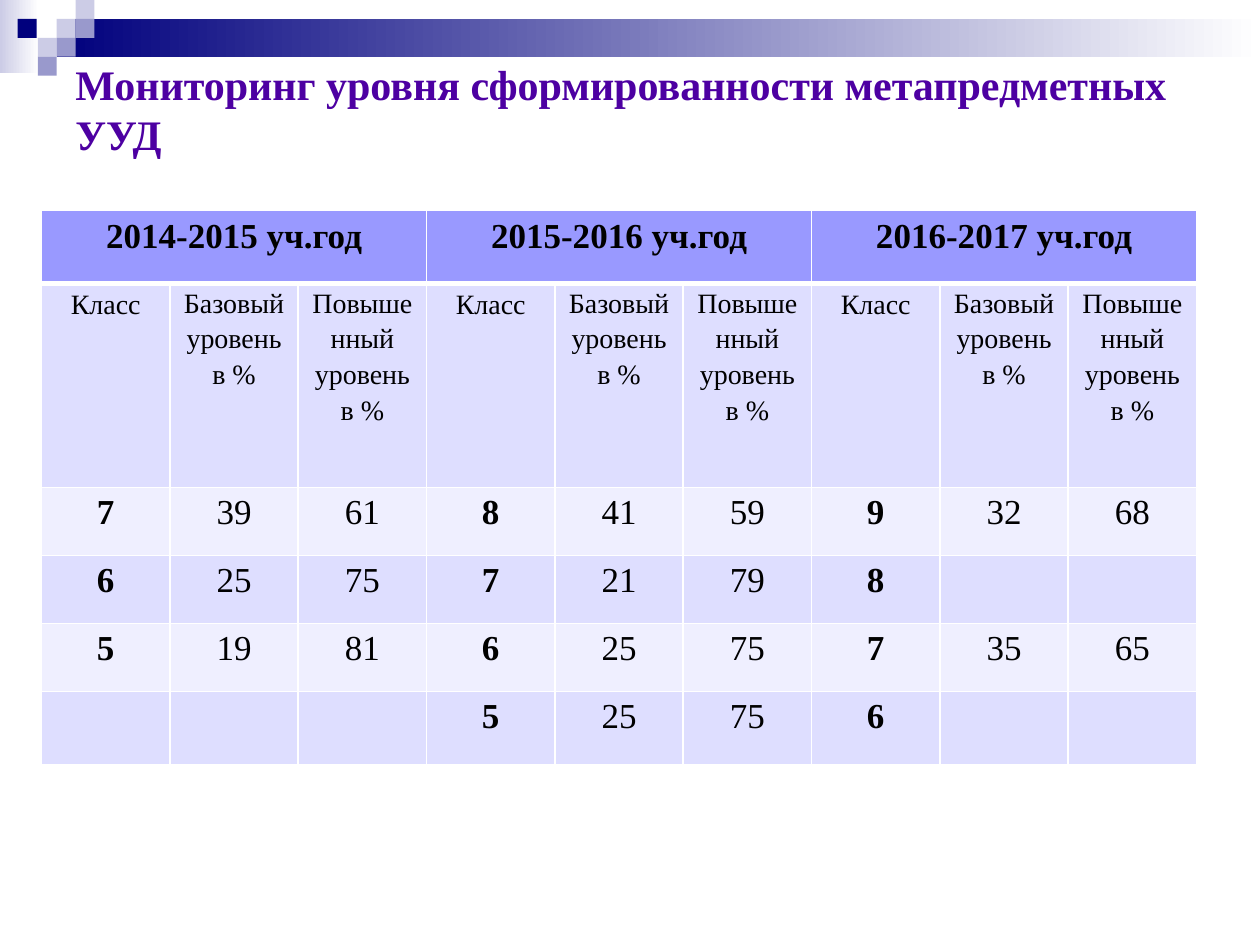
from lxml import etree
from pptx import Presentation
from pptx.dml.color import RGBColor
from pptx.enum.shapes import MSO_SHAPE
from pptx.enum.text import MSO_ANCHOR, PP_ALIGN
from pptx.oxml.ns import qn
from pptx.util import Inches, Pt

RECT = MSO_SHAPE.RECTANGLE
MIDDLE = MSO_ANCHOR.MIDDLE
CENTER = PP_ALIGN.CENTER
FONT = "Times New Roman"

# Content
TITLE = "Мониторинг уровня сформированности метапредметных УУД"
YEARS = ["2014-2015 уч.год", "2015-2016 уч.год", "2016-2017 уч.год"]
HEADS = ["Класс", "Базовый уровень в %", "Повышенный уровень в %"]
DATA = [
    ["7", "39", "61", "8", "41", "59", "9", "32", "68"],
    ["6", "25", "75", "7", "21", "79", "8", "", ""],
    ["5", "19", "81", "6", "25", "75", "7", "35", "65"],
    ["", "", "", "5", "25", "75", "6", "", ""],
]
ROWS = [0.58, 1.62, 0.54, 0.54, 0.54, 0.58]
WIDTH = 9.17
HEAD, DARK, LIGHT = "9999FF", "DEDEFF", "EFEFFF"

# Banner: fades (box, start colour), then small squares (left, top, colour)
NAVY, PALE, MID = "00007D", "CCCCE6", "9999CC"
FADES = [((0, 0, 0.31, 0.58), PALE), ((0.45, 0.15, 9.55, 0.3), NAVY)]
SIDE = 0.15
TILES = [
    (0.45, 0.15, PALE), (0.6, 0, PALE), (0.6, 0.15, MID), (0.3, 0.3, PALE),
    (0.14, 0.15, NAVY), (0.45, 0.3, MID), (0.3, 0.45, MID),
]


def rgb(code):
    return RGBColor.from_string(code)


def add_rect(slide, box, color, fade=False):
    shape = slide.shapes.add_shape(RECT, *map(Inches, box))
    shape.shadow.inherit = False
    shape.line.fill.background()
    if fade:
        shape.fill.gradient()
        shape.fill.gradient_angle = 0
        for stop, code in zip(shape.fill.gradient_stops, (color, "FFFFFF")):
            stop.color.rgb = rgb(code)
    else:
        shape.fill.solid()
        shape.fill.fore_color.rgb = rgb(color)


def add_run(par, text, size, bold, color="000000"):
    run = par.add_run()
    run.text = text
    font = run.font
    font.name, font.size, font.bold = FONT, Pt(size), bold
    font.color.rgb = rgb(color)


def set_cell(cell, color, top=1, bottom=1):
    props = cell._tc.get_or_add_tcPr()
    for side, width in (("L", 1), ("R", 1), ("T", top), ("B", bottom)):
        line = etree.SubElement(props, qn("a:ln" + side), w=str(Pt(width)))
        fill = etree.SubElement(line, qn("a:solidFill"))
        etree.SubElement(fill, qn("a:srgbClr"), val="FFFFFF")
    cell.fill.solid()
    cell.fill.fore_color.rgb = rgb(color)


def fill_text(cell, text, size, bold, tight):
    if not text:
        return
    par = cell.text_frame.paragraphs[0]
    par.alignment = CENTER
    if tight:
        par.line_spacing = 1.15
        cell.margin_left = cell.margin_right = Inches(0.07)
        cell.margin_top = cell.margin_bottom = 0
    add_run(par, text, size, bold)


def add_grid(slide):
    span = len(HEADS)
    count = span * len(YEARS)
    frame = slide.shapes.add_table(
        len(ROWS), count, Inches(0.33), Inches(1.67), Inches(WIDTH), Inches(sum(ROWS)))
    table = frame.table
    for row, height in zip(table.rows, ROWS):
        row.height = Inches(height)
    for col in table.columns:
        col.width = Inches(WIDTH / count)

    # School years, each over three columns
    for col in range(count):
        set_cell(table.cell(0, col), HEAD, bottom=3)
    for i, year in enumerate(YEARS):
        cell = table.cell(0, i * span)
        cell.merge(table.cell(0, (i + 1) * span - 1))
        fill_text(cell, year, 20, True, False)

    # Column heads and results
    for r, texts in enumerate([HEADS * len(YEARS)] + DATA, 1):
        for c, text in enumerate(texts):
            cell = table.cell(r, c)
            first = c % span == 0
            set_cell(cell, DARK if r == 1 or r % 2 else LIGHT, top=3 if r == 1 else 1)
            if r == 1:
                fill_text(cell, text, 16, False, not first)
            else:
                fill_text(cell, text, 20, first, True)


def add_title(slide):
    box = slide.shapes.add_textbox(Inches(0.5), Inches(0.5), Inches(9), Inches(1.08))
    frame = box.text_frame
    frame.word_wrap = True
    frame.vertical_anchor = MIDDLE
    frame.margin_bottom = Inches(0.4)
    add_run(frame.paragraphs[0], TITLE, 24, True, "4D00A2")


def main():
    deck = Presentation()
    deck.slide_width, deck.slide_height = Inches(10), Inches(7.5)
    slide = deck.slides.add_slide(deck.slide_layouts[6])
    for box, color in FADES:
        add_rect(slide, box, color, fade=True)
    for left, top, color in TILES:
        add_rect(slide, (left, top, SIDE, SIDE), color)
    add_title(slide)
    add_grid(slide)
    deck.save("out.pptx")


if __name__ == "__main__":
    main()
